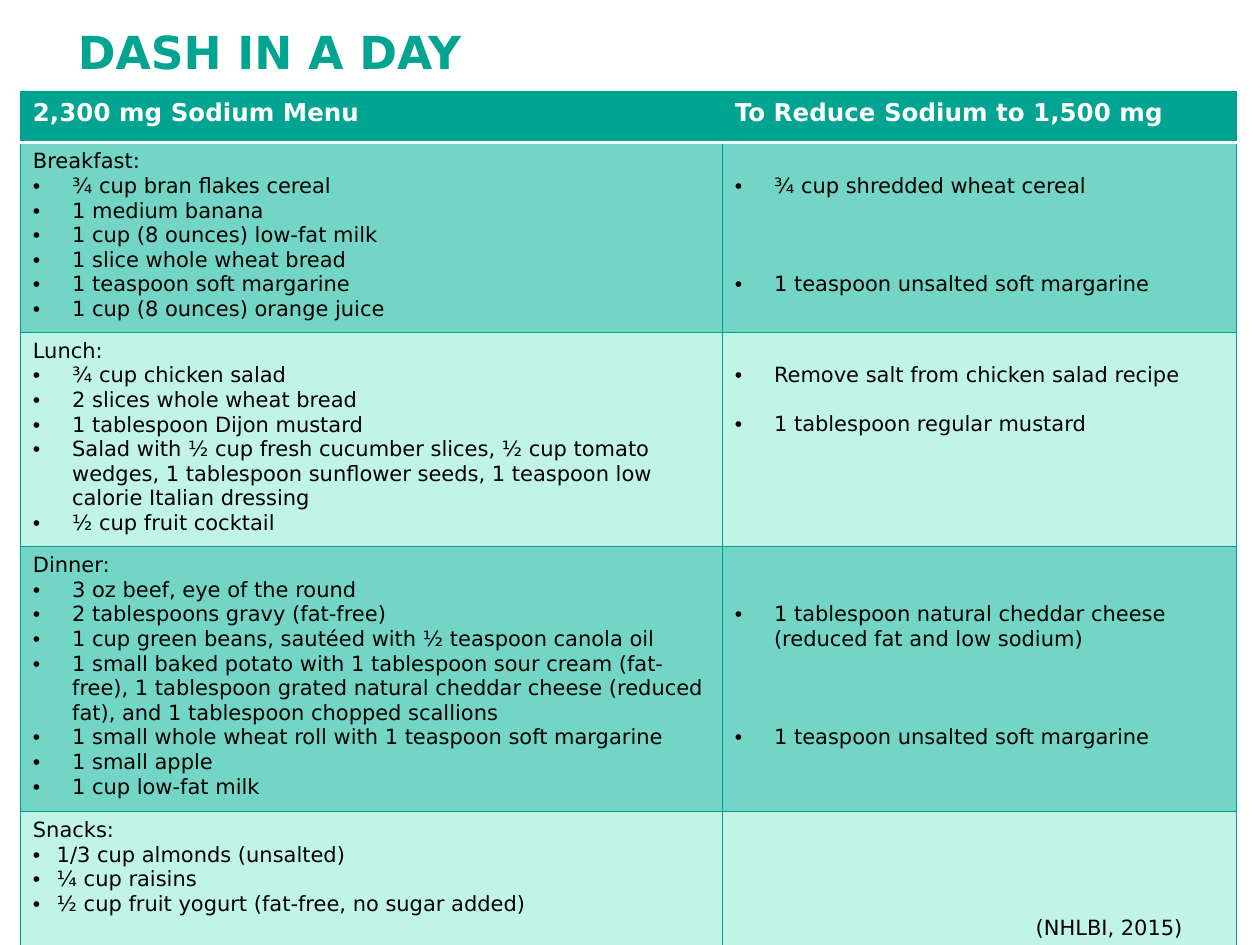
from dataclasses import dataclass

from lxml import etree
from pptx import Presentation
from pptx.dml.color import RGBColor
from pptx.enum.text import MSO_ANCHOR, PP_ALIGN
from pptx.oxml.ns import qn
from pptx.util import Cm, Pt

LEFT, RIGHT, TOP = PP_ALIGN.LEFT, PP_ALIGN.RIGHT, MSO_ANCHOR.TOP
FONT = "DejaVu Sans"
COLORS = {
    "teal": "01A490",
    "border": "00A18E",
    "dark_band": "73D5C5",
    "light_band": "BFF4E7",
    "white": "FFFFFF",
    "black": "000000",
}
LINE_PT = 14  # height of one 12 pt line
WIDE_INDENT, NARROW_INDENT = 0.79, 0.48  # cm


@dataclass
class Line:
    text: str
    indent: float = 0  # cm; zero means no bullet
    lines_above: int = 0
    size: int = 12
    color: str = "black"
    bold: bool = False
    align: PP_ALIGN = LEFT


@dataclass
class CellContent:
    lines: list[Line]
    top: float = 0.13  # cm
    right: float = 0.25  # cm


@dataclass
class MenuRow:
    height: float  # cm
    fill: str
    menu: CellContent
    swaps: CellContent


def header(text: str) -> CellContent:
    return CellContent([Line(text, size=14, color="white", bold=True)])


def meal(name: str, items: list[str], indent: float = WIDE_INDENT) -> CellContent:
    return CellContent([Line(name)] + [Line(item, indent) for item in items])


def swaps(first: str, second: str, gap: int, top: float) -> CellContent:
    return CellContent(
        [Line(first, WIDE_INDENT), Line(second, WIDE_INDENT, gap)], top
    )


ROWS = [
    MenuRow(1.03, "teal", header("2,300 mg Sodium Menu"),
            header("To Reduce Sodium to 1,500 mg")),
    MenuRow(3.82, "dark_band",
            meal("Breakfast:", [
                "¾ cup bran flakes cereal",
                "1 medium banana",
                "1 cup (8 ounces) low-fat milk",
                "1 slice whole wheat bread",
                "1 teaspoon soft margarine",
                "1 cup (8 ounces) orange juice",
            ]),
            swaps("¾ cup shredded wheat cereal",
                  "1 teaspoon unsalted soft margarine", 3, 0.62)),
    MenuRow(4.32, "light_band",
            meal("Lunch:", [
                "¾ cup chicken salad",
                "2 slices whole wheat bread",
                "1 tablespoon Dijon mustard",
                "Salad with ½ cup fresh cucumber slices, ½ cup tomato wedges, "
                "1 tablespoon sunflower seeds, 1 teaspoon low calorie Italian dressing",
                "½ cup fruit cocktail",
            ]),
            swaps("Remove salt from chicken salad recipe",
                  "1 tablespoon regular mustard", 1, 0.62)),
    MenuRow(5.32, "dark_band",
            meal("Dinner:", [
                "3 oz beef, eye of the round",
                "2 tablespoons gravy (fat-free)",
                "1 cup green beans, sautéed with ½ teaspoon canola oil",
                "1 small baked potato with 1 tablespoon sour cream (fat-free), "
                "1 tablespoon grated natural cheddar cheese (reduced fat), "
                "and 1 tablespoon chopped scallions",
                "1 small whole wheat roll with 1 teaspoon soft margarine",
                "1 small apple",
                "1 cup low-fat milk",
            ]),
            swaps("1 tablespoon natural cheddar cheese (reduced fat and low sodium)",
                  "1 teaspoon unsalted soft margarine", 3, 1.12)),
    MenuRow(2.72, "light_band",
            meal("Snacks:", [
                "1/3 cup almonds (unsalted)",
                "¼ cup raisins",
                "½ cup fruit yogurt (fat-free, no sugar added)",
            ], NARROW_INDENT),
            CellContent([Line("(NHLBI, 2015)", align=RIGHT)], top=2.1, right=1.08)),
]


def write_lines(frame, lines: list[Line]) -> None:
    frame.word_wrap = True
    for index, line in enumerate(lines):
        paragraph = frame.add_paragraph() if index else frame.paragraphs[0]
        paragraph.alignment = line.align
        if line.lines_above:
            paragraph.space_before = Pt(line.lines_above * LINE_PT)
        if line.indent:
            properties = paragraph._p.get_or_add_pPr()
            properties.set("marL", str(Cm(line.indent)))
            properties.set("indent", str(-Cm(line.indent)))
            etree.SubElement(properties, qn("a:buFont"), typeface="Arial")
            etree.SubElement(properties, qn("a:buChar"), char="•")
        run = paragraph.add_run()
        run.text = line.text
        run.font.name = FONT
        run.font.size = Pt(line.size)
        run.font.bold = line.bold
        run.font.color.rgb = RGBColor.from_string(COLORS[line.color])


def set_border(cell, position: int, side: str, color: str, width: float) -> None:
    border = etree.Element(qn(f"a:ln{side}"), w=str(Pt(width)))
    fill = etree.SubElement(border, qn("a:solidFill"))
    etree.SubElement(fill, qn("a:srgbClr"), val=COLORS[color])
    cell._tc.get_or_add_tcPr().insert(position, border)


def fill_cell(cell, content: CellContent, fill: str, row: int) -> None:
    cell.vertical_anchor = TOP
    cell.margin_top = Cm(content.top)
    cell.margin_right = Cm(content.right)
    cell.fill.solid()
    cell.fill.fore_color.rgb = RGBColor.from_string(COLORS[fill])
    write_lines(cell.text_frame, content.lines)
    # The line under the header is white and heavier
    header_edge = {0: "B", 1: "T"}.get(row)
    for position, side in enumerate("LRTB"):
        color, width = ("white", 2) if side == header_edge else ("border", 0.75)
        set_border(cell, position, side, color, width)


def main() -> None:
    presentation = Presentation()
    presentation.slide_width, presentation.slide_height = Cm(25.4), Cm(19.05)
    slide = presentation.slides.add_slide(presentation.slide_layouts[6])

    # Title
    title = slide.shapes.add_textbox(Cm(1.32), Cm(0.36), Cm(23.24), Cm(1.4))
    write_lines(title.text_frame,
                [Line("DASH IN A DAY", size=26, color="teal", bold=True)])

    # Menu table
    column_widths = (14.15, 10.36)
    table = slide.shapes.add_table(
        len(ROWS), len(column_widths), Cm(0.41), Cm(1.85),
        Cm(sum(column_widths)), Cm(sum(row.height for row in ROWS)),
    ).table
    table.first_row = table.horz_banding = False
    for column, width in zip(table.columns, column_widths):
        column.width = Cm(width)
    for index, row in enumerate(ROWS):
        table.rows[index].height = Cm(row.height)
        for column, content in enumerate((row.menu, row.swaps)):
            fill_cell(table.cell(index, column), content, row.fill, index)

    presentation.save("out.pptx")


if __name__ == "__main__":
    main()
